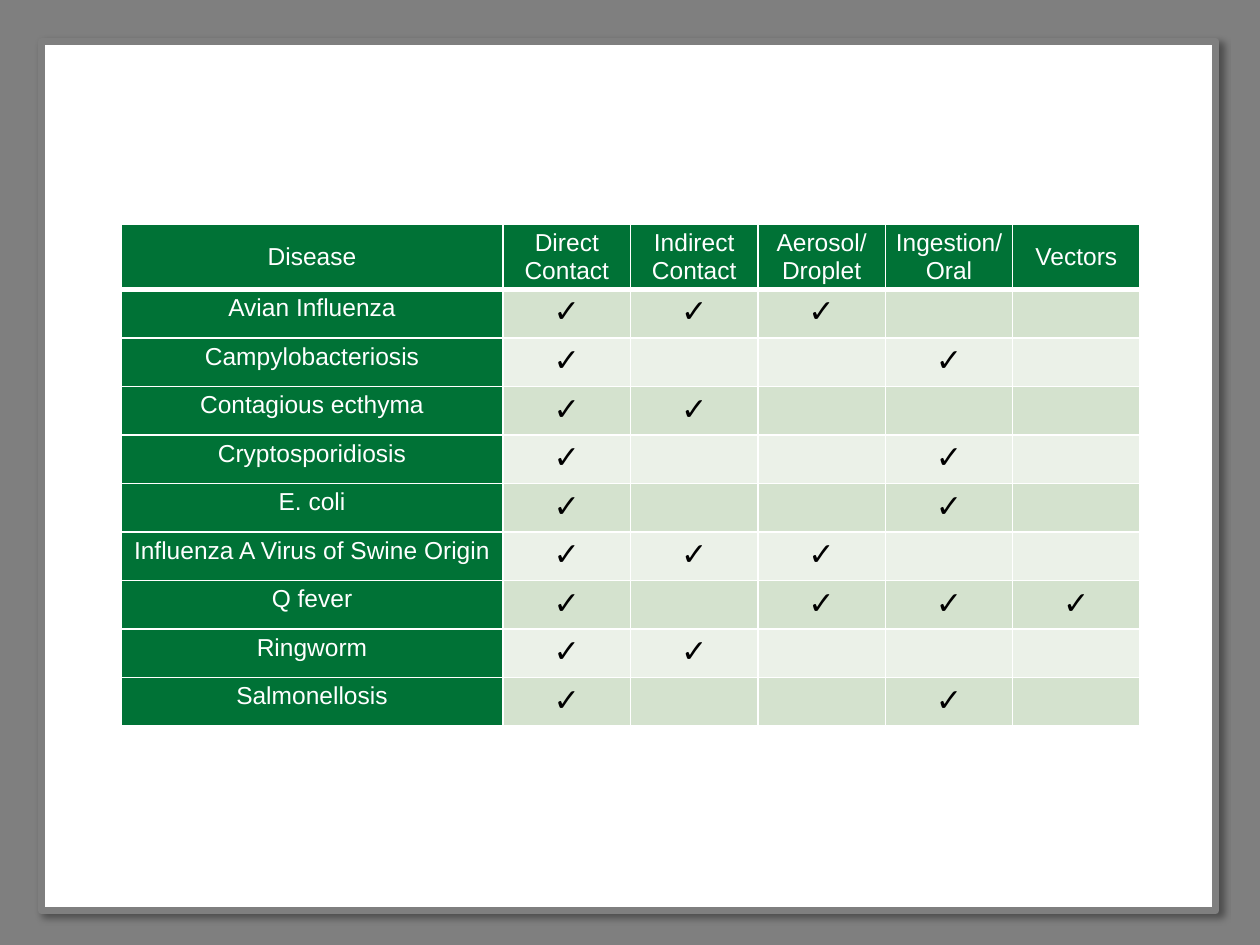
from lxml import etree
from pptx import Presentation
from pptx import util as u
from pptx.dml.color import RGBColor
from pptx.enum import shapes, text
from pptx.oxml import ns

COLORS = {
    "backdrop": "7F7F7F",
    "white": "FFFFFF",
    "black": "000000",
    "green": "007236",
    "odd": "D4E2CE",
    "even": "EBF1E8",
}
FONT = "Arial"
CHECK = "✓"
HEADERS = ["Disease", "Direct Contact", "Indirect Contact",
           "Aerosol/ Droplet", "Ingestion/Oral", "Vectors"]
DIRECT, INDIRECT, AEROSOL, ORAL, VECTORS = range(1, 6)
ROUTES = {
    "Avian Influenza": {DIRECT, INDIRECT, AEROSOL},
    "Campylobacteriosis": {DIRECT, ORAL},
    "Contagious ecthyma": {DIRECT, INDIRECT},
    "Cryptosporidiosis": {DIRECT, ORAL},
    "E. coli": {DIRECT, ORAL},
    "Influenza A Virus of Swine Origin": {DIRECT, INDIRECT, AEROSOL},
    "Q fever": {DIRECT, AEROSOL, ORAL, VECTORS},
    "Ringworm": {DIRECT, INDIRECT},
    "Salmonellosis": {DIRECT, ORAL},
}


def paint(fill, color):
    fill.solid()
    fill.fore_color.rgb = RGBColor.from_string(COLORS[color])


def add_element(parent, tag, **attributes):
    return etree.SubElement(parent, ns.qn(tag), attributes)


def add_shadow(shape):
    effects = add_element(shape._element.spPr, "a:effectLst")
    shadow = add_element(effects, "a:outerShdw", blurRad=str(u.Pt(4)),
                         dist=str(u.Pt(3)), dir="2700000", algn="tl",
                         rotWithShape="0")
    color = add_element(shadow, "a:srgbClr", val=COLORS["black"])
    add_element(color, "a:alpha", val="40000")


def add_panel(page):
    panel = page.shapes.add_shape(
        shapes.MSO_SHAPE.RECTANGLE,
        u.Inches(0.33), u.Inches(0.33), u.Inches(9.32), u.Inches(6.9))
    paint(panel.fill, "white")
    paint(panel.line.fill, "backdrop")
    panel.line.width = u.Pt(4)
    add_shadow(panel)


def set_borders(cell, top, bottom):
    properties = cell._tc.get_or_add_tcPr()
    for side, width in (("L", 1), ("R", 1), ("T", top), ("B", bottom)):
        line = add_element(properties, "a:ln" + side, w=str(u.Pt(width)))
        fill = add_element(line, "a:solidFill")
        add_element(fill, "a:srgbClr", val=COLORS["white"])


def write_cell(cell, words, size, color, bold=False):
    para = cell.text_frame.paragraphs[0]
    para.text = words
    para.alignment = text.PP_ALIGN.CENTER
    for span in para.runs:
        span.font.name = FONT
        span.font.size = u.Pt(size)
        span.font.bold = bold
        span.font.color.rgb = RGBColor.from_string(COLORS[color])


def style_cell(cell, row, column):
    cell.margin_left = cell.margin_right = u.Inches(0.07)
    cell.margin_top = cell.margin_bottom = u.Inches(0.04)
    if row == 0:
        cell.vertical_anchor = text.MSO_ANCHOR.MIDDLE
    set_borders(cell, top=3 if row == 1 else 1, bottom=3 if row == 0 else 1)
    band = "odd" if row % 2 else "even"
    paint(cell.fill, "green" if row == 0 or column == 0 else band)


def add_route_table(page):
    width, height = u.Inches(8.09), u.Inches(3.84)
    table = page.shapes.add_table(
        len(ROUTES) + 1, len(HEADERS),
        u.Inches(0.96), u.Inches(1.78), width, height).table
    for index, column in enumerate(table.columns):
        column.width = width * (1 if index else 3) // 8
    for row, line in enumerate(table.rows):
        line.height = height // len(table.rows)
        for column, cell in enumerate(line.cells):
            style_cell(cell, row, column)
    for column, header in enumerate(HEADERS):
        write_cell(table.cell(0, column), header, 14, "white")
    for row, (disease, routes) in enumerate(ROUTES.items(), start=1):
        write_cell(table.cell(row, 0), disease, 14, "white")
        for column in routes:
            write_cell(table.cell(row, column), CHECK, 18, "black", bold=True)


def main():
    deck = Presentation()
    deck.slide_width, deck.slide_height = u.Inches(10), u.Inches(7.5)
    page = deck.slides.add_slide(deck.slide_layouts[6])
    paint(page.background.fill, "backdrop")
    add_panel(page)
    add_route_table(page)
    deck.save("out.pptx")


if __name__ == "__main__":
    main()
